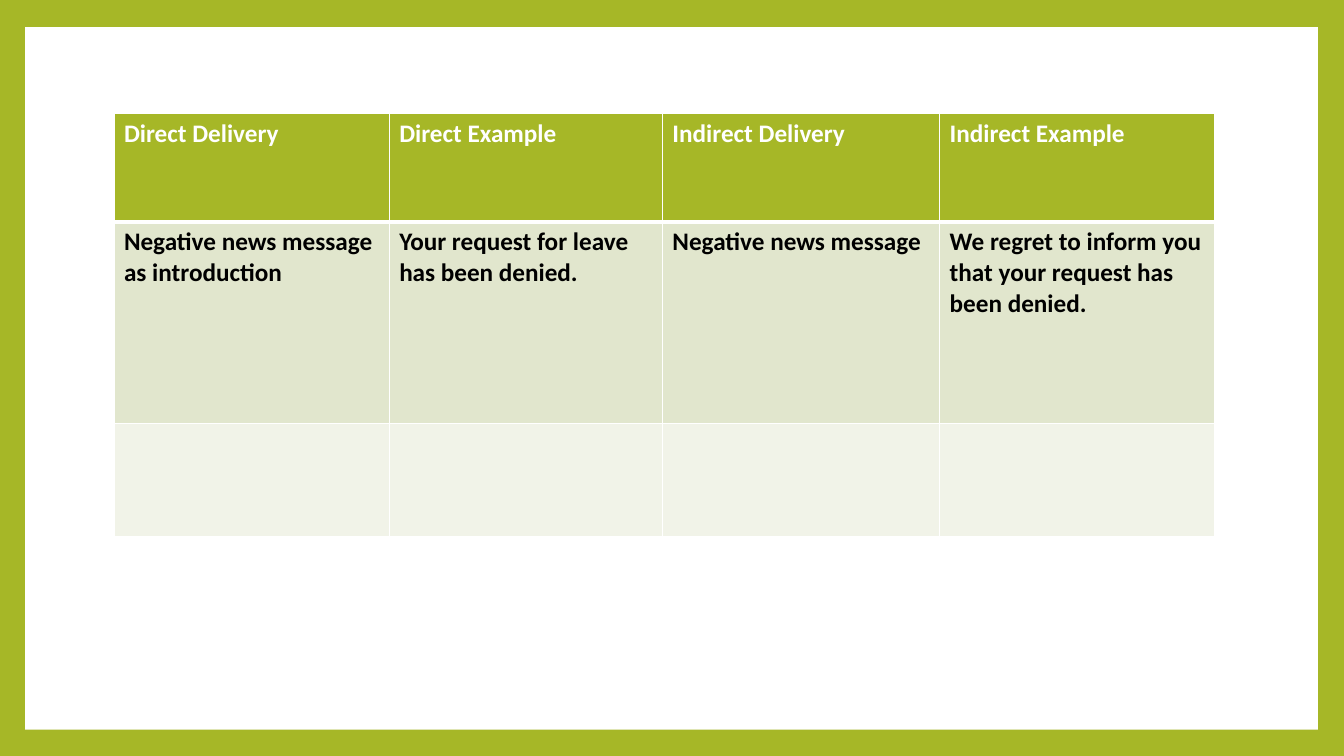
from lxml import etree
from pptx import Presentation
from pptx.dml.color import RGBColor
from pptx.enum.shapes import MSO_SHAPE
from pptx.oxml.ns import qn
from pptx.util import Inches, Pt

RECTANGLE = MSO_SHAPE.RECTANGLE
BLANK_LAYOUT = 6
COLORS = {
    "green": "A6B727",
    "white": "FFFFFF",
    "black": "000000",
    "band": "E1E6CD",
    "pale": "F1F3E8",
}
FONT = {"name": "Calibri", "size": Pt(18), "bold": True}
THIN, THICK = 1, 3

COLUMN_WIDTHS = [2.73, 2.71, 2.75, 2.73]
ROWS = [
    {
        "height": 1.07, "fill": "green", "color": "white",
        "top": THIN, "bottom": THICK,
        "texts": ["Direct Delivery", "Direct Example",
                  "Indirect Delivery", "Indirect Example"],
    },
    {
        "height": 2, "fill": "band", "color": "black",
        "top": THICK, "bottom": THIN,
        "texts": ["Negative news message as introduction",
                  "Your request for leave has been denied.",
                  "Negative news message",
                  "We regret to inform you that your request has been denied."],
    },
    {
        "height": 1.12, "fill": "pale", "color": "black",
        "top": THIN, "bottom": THIN,
        "texts": [""] * len(COLUMN_WIDTHS),
    },
]


def rgb(name):
    return RGBColor.from_string(COLORS[name])


def paint(fill, name):
    fill.solid()
    fill.fore_color.rgb = rgb(name)


class SlideBuilder:
    def __init__(self, deck):
        self.page = deck.slides.add_slide(deck.slide_layouts[BLANK_LAYOUT])

    def background(self, color):
        paint(self.page.background.fill, color)

    def panel(self, left, top, width, height, color):
        box = self.page.shapes.add_shape(
            RECTANGLE, Inches(left), Inches(top), Inches(width), Inches(height))
        box.shadow.inherit = False
        paint(box.fill, color)
        box.line.fill.background()

    def borders(self, cell, top, bottom):
        """Draw white cell edges; widths are in points."""
        properties = cell._tc.get_or_add_tcPr()
        widths = {"lnL": THIN, "lnR": THIN, "lnT": top, "lnB": bottom}
        for edge, width in widths.items():
            line = etree.SubElement(properties, qn(f"a:{edge}"), w=str(Pt(width)))
            solid = etree.SubElement(line, qn("a:solidFill"))
            etree.SubElement(solid, qn("a:srgbClr"), val=COLORS["white"])

    def fill_cell(self, cell, text, row):
        # Border elements must precede the fill element in the cell properties.
        self.borders(cell, row["top"], row["bottom"])
        paint(cell.fill, row["fill"])
        cell.text = text
        para = cell.text_frame.paragraphs[0]
        for name, value in FONT.items():
            setattr(para.font, name, value)
        para.font.color.rgb = rgb(row["color"])
        for span in para.runs:
            for name, value in FONT.items():
                setattr(span.font, name, value)
            span.font.color.rgb = rgb(row["color"])

    def table(self, left, top, column_widths, rows):
        width = sum(column_widths)
        height = sum(row["height"] for row in rows)
        table = self.page.shapes.add_table(
            len(rows), len(column_widths),
            Inches(left), Inches(top), Inches(width), Inches(height)).table
        for column, column_width in zip(table.columns, column_widths):
            column.width = Inches(column_width)
        for table_row, row in zip(table.rows, rows):
            table_row.height = Inches(row["height"])
            for cell, text in zip(table_row.cells, row["texts"]):
                self.fill_cell(cell, text, row)


def main():
    deck = Presentation()
    deck.slide_width, deck.slide_height = Inches(13.33), Inches(7.5)
    builder = SlideBuilder(deck)
    builder.background("green")
    builder.panel(0.25, 0.27, 12.82, 6.97, "white")
    builder.table(1.13, 1.13, COLUMN_WIDTHS, ROWS)
    deck.save("out.pptx")


if __name__ == "__main__":
    main()
